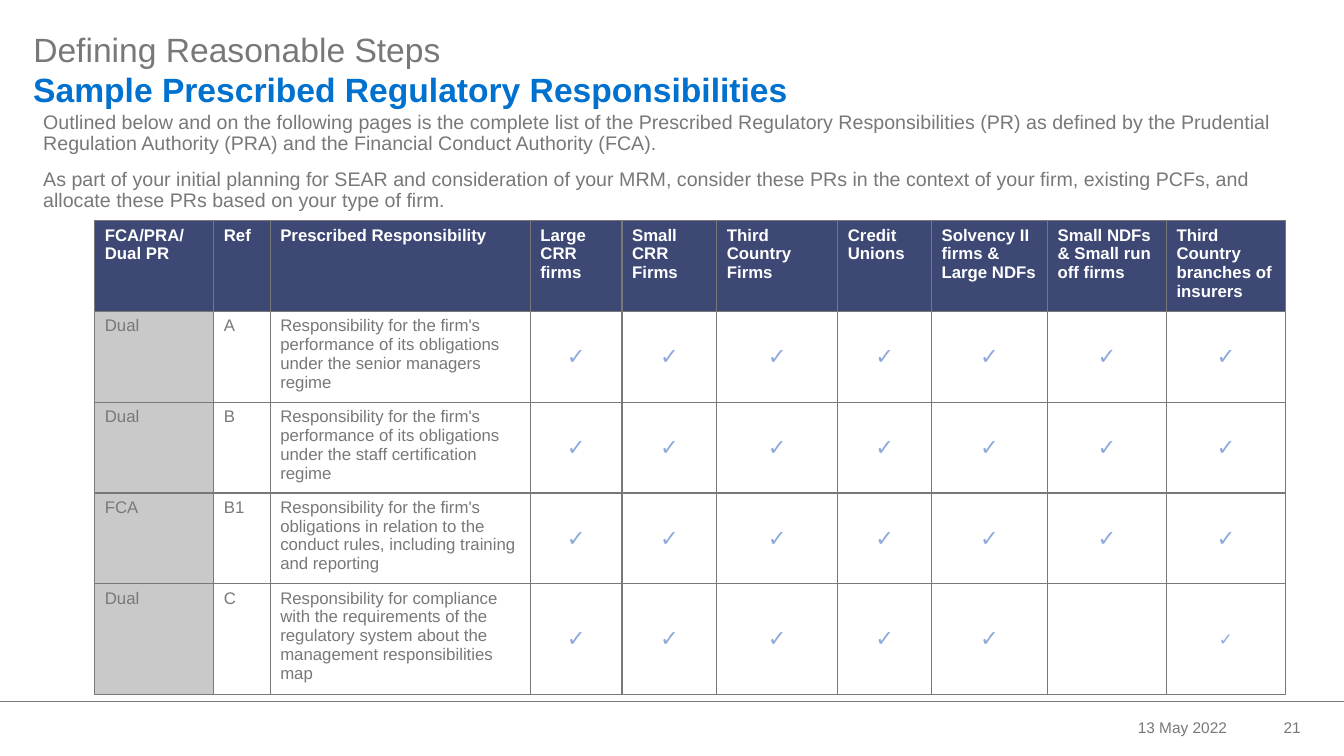
"""Build the slide of sample prescribed regulatory responsibilities."""
from lxml.etree import SubElement
from pptx import Presentation
from pptx.dml.color import RGBColor
from pptx.enum.shapes import MSO_CONNECTOR as Connector
from pptx.enum.text import MSO_ANCHOR as Anchor, PP_ALIGN as Align
from pptx.oxml.ns import qn
from pptx.util import Inches, Pt

WIDTH, HEIGHT = 13.33, 7.5
LEFT = 0.33
FONT = "Arial"
GREY, BLUE, NAVY, PALE, TICK, WHITE = "787878", "0071CE", "3D4875", "C9C9C9", "8EA9DB", "FFFFFF"

TITLE = "Defining Reasonable Steps"
SUBTITLE = "Sample Prescribed Regulatory Responsibilities"
INTRO = [
    "Outlined below and on the following pages is the complete list of the Prescribed Regulatory "
    "Responsibilities (PR) as defined by the Prudential Regulation Authority (PRA) and the Financial "
    "Conduct Authority (FCA).",
    "As part of your initial planning for SEAR and consideration of your MRM, consider these PRs in the "
    "context of your firm, existing PCFs, and allocate these PRs based on your type of firm.",
]
COLUMNS = [
    ("FCA/PRA/\nDual PR", 1.18),
    ("Ref", 0.56),
    ("Prescribed Responsibility", 2.58),
    ("Large CRR firms", 0.91),
    ("Small CRR Firms", 0.94),
    ("Third Country Firms", 1.2),
    ("Credit Unions", 0.93),
    ("Solvency II firms & Large NDFs", 1.15),
    ("Small NDFs & Small run off firms", 1.18),
    ("Third Country branches of insurers", 1.18),
]
RESPONSIBILITIES = [
    ("Dual", "A", "Responsibility for the firm's performance of its obligations under the senior managers "
     "regime", "✓✓✓✓✓✓✓"),
    ("Dual", "B", "Responsibility for the firm's performance of its obligations under the staff "
     "certification regime", "✓✓✓✓✓✓✓"),
    ("FCA", "B1", "Responsibility for the firm's obligations in relation to the conduct rules, including "
     "training and reporting", "✓✓✓✓✓✓✓"),
    ("Dual", "C", "Responsibility for compliance with the requirements of the regulatory system about the "
     "management responsibilities map", "✓✓✓✓✓ ✓"),
]
ROW_HEIGHTS = [0.78] * 4 + [0.95]
SMALL_TICK = (len(RESPONSIBILITIES), len(COLUMNS) - 1)
FOOTER = [("13 May 2022", 9.06, 3.21), ("21", 12.27, 0.73)]


def color(value):
    return RGBColor.from_string(value)


def style(paragraph, size, ink, bold=False, align=Align.LEFT):
    paragraph.alignment = align
    font = paragraph.font
    font.name, font.size, font.bold = FONT, Pt(size), bold
    font.color.rgb = color(ink)


def add_text(slide, lines, box, size, ink, bold=False, align=Align.LEFT, spacing=None,
             anchor=Anchor.TOP, flush=False):
    frame = slide.shapes.add_textbox(*map(Inches, box)).text_frame
    frame.word_wrap, frame.vertical_anchor = True, anchor
    if flush:
        frame.margin_left = frame.margin_right = frame.margin_top = 0
        frame.margin_bottom = Inches(0.08)
    frame.text = "\n".join(lines)
    for index, paragraph in enumerate(frame.paragraphs):
        style(paragraph, size, ink, bold, align)
        paragraph.line_spacing = spacing
        if index:
            paragraph.space_before = Pt(10)


def fill_cell(cell, text, size, ink, bold=False, back=None, centred=False):
    cell.text = text
    cell.vertical_anchor = Anchor.MIDDLE if centred else Anchor.TOP
    for paragraph in cell.text_frame.paragraphs:
        style(paragraph, size, ink, bold, Align.CENTER if centred else Align.LEFT)
    properties = cell._tc.get_or_add_tcPr()
    for side in ("a:lnL", "a:lnR", "a:lnT", "a:lnB"):
        border = SubElement(properties, qn(side), w=str(Pt(1)))
        SubElement(SubElement(border, qn("a:solidFill")), qn("a:srgbClr"), val=GREY)
    if back:
        cell.fill.solid()
        cell.fill.fore_color.rgb = color(back)
    else:
        cell.fill.background()


def add_responsibilities(slide):
    widths = [width for _, width in COLUMNS]
    table = slide.shapes.add_table(
        len(ROW_HEIGHTS), len(COLUMNS), Inches(0.94), Inches(2.19),
        Inches(sum(widths)), Inches(sum(ROW_HEIGHTS))).table
    for column, width in zip(table.columns, widths):
        column.width = Inches(width)
    for row, height in zip(table.rows, ROW_HEIGHTS):
        row.height = Inches(height)
    for index, (heading, _) in enumerate(COLUMNS):
        fill_cell(table.cell(0, index), heading, 12, WHITE, True, NAVY)
    for row, (*details, ticks) in enumerate(RESPONSIBILITIES, 1):
        for index, detail in enumerate(details):
            fill_cell(table.cell(row, index), detail, 12, GREY, back=None if index else PALE)
        for index, tick in enumerate(ticks, len(details)):
            size = 12 if (row, index) == SMALL_TICK else 16
            fill_cell(table.cell(row, index), tick.strip(), size, TICK, True, centred=True)


def add_footer(slide):
    top = Inches(6.96)
    rule = slide.shapes.add_connector(Connector.STRAIGHT, 0, top, Inches(WIDTH), top)
    rule.line.color.rgb, rule.line.width = color(GREY), Pt(0.5)
    SubElement(rule._element.spPr, qn("a:effectLst"))
    for text, left, width in FOOTER:
        add_text(slide, [text], (left, 7.07, width, 0.3), 11, GREY, align=Align.RIGHT, anchor=Anchor.MIDDLE)


def main():
    deck = Presentation()
    deck.slide_width, deck.slide_height = Inches(WIDTH), Inches(HEIGHT)
    slide = deck.slides.add_slide(deck.slide_layouts[6])
    add_footer(slide)
    add_responsibilities(slide)
    add_text(slide, [SUBTITLE], (LEFT, 0.73, 7.83, 0.39), 24, BLUE, True, spacing=0.9, flush=True)
    add_text(slide, [TITLE], (LEFT, 0.33, 6.18, 0.39), 24, GREY, spacing=0.9, flush=True)
    add_text(slide, INTRO, (LEFT, 1.07, 12.79, 4.54), 14, GREY, spacing=0.9)
    deck.save("out.pptx")


if __name__ == "__main__":
    main()
